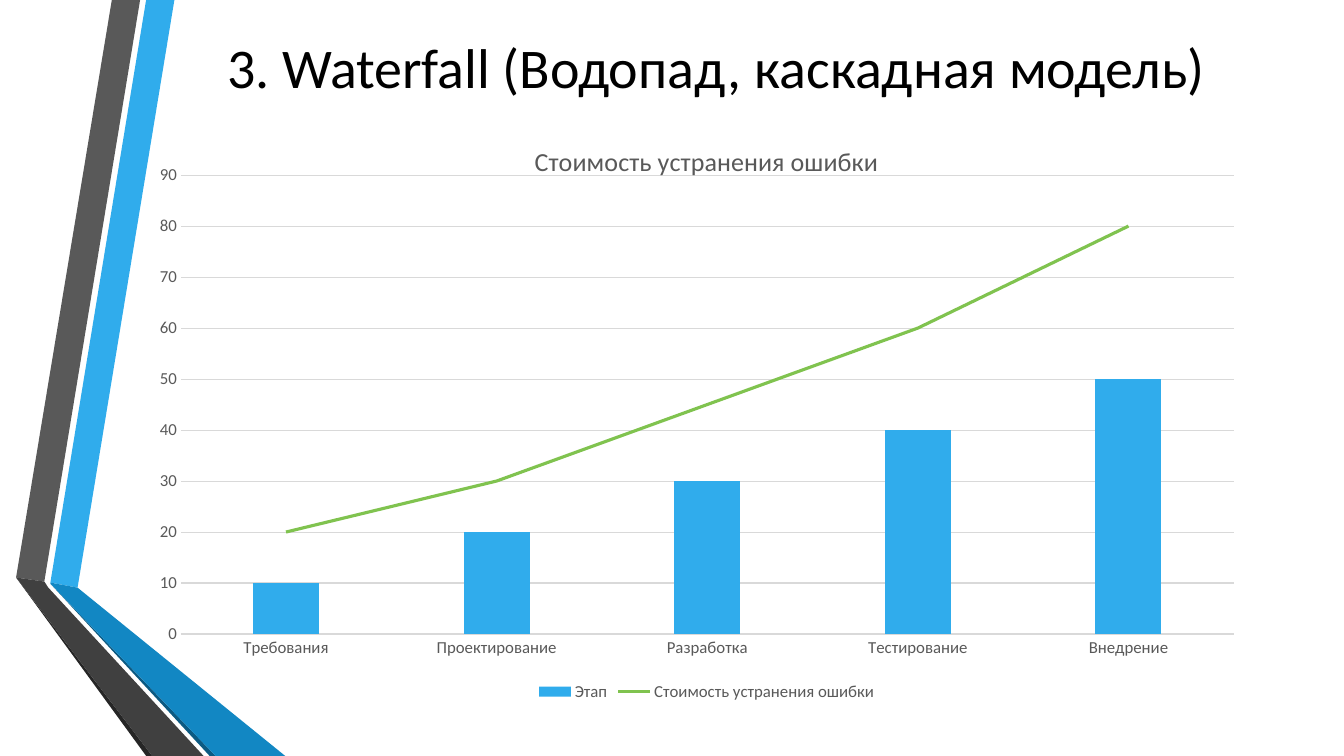
from lxml.etree import SubElement
from pptx import Presentation
from pptx.chart.data import CategoryChartData
from pptx.dml.color import RGBColor
from pptx.enum.chart import XL_CHART_TYPE as ChartType, XL_LEGEND_POSITION as LegendPos
from pptx.enum.chart import XL_MARKER_STYLE as Marker, XL_TICK_MARK as Tick
from pptx.enum.text import MSO_ANCHOR as Anchor, PP_ALIGN as Align
from pptx.oxml import parse_xml
from pptx.oxml.ns import nsdecls, qn
from pptx.util import Inches, Pt

FONT = "Calibri"
BLACK = RGBColor(0x00, 0x00, 0x00)
TEXT_GREY = RGBColor(0x59, 0x59, 0x59)
GRID_GREY = RGBColor(0xD9, 0xD9, 0xD9)
BLUE = RGBColor(0x30, 0xAC, 0xEC)
BLUE_MID = RGBColor(0x12, 0x87, 0xC3)
BLUE_DARK = RGBColor(0x0C, 0x5A, 0x82)
GREEN = RGBColor(0x80, 0xC3, 0x4F)
GREY = RGBColor(0x59, 0x59, 0x59)
GREY_MID = RGBColor(0x40, 0x40, 0x40)
GREY_DARK = RGBColor(0x26, 0x26, 0x26)

# Outlines of the folded ribbons, in inches from the corner of their box
RIBBONS = [
    (BLUE, [(0.5, 5.78), (0.77, 5.83), (1.73, 0), (1.45, 0)]),
    (GREY, [(1.39, 0), (1.11, 0), (0.16, 5.73), (0.44, 5.77)]),
    (GREY_DARK, [(0.16, 5.73), (1.45, 7.5), (1.51, 7.5)]),
    (BLUE_DARK, [(0.5, 5.79), (2.08, 7.5), (2.14, 7.5)]),
    (BLUE_MID, [(0.5, 5.79), (2.14, 7.5), (2.83, 7.5), (0.77, 5.83), (0.5, 5.78)]),
    (GREY_MID, [(2.02, 7.5), (0.48, 5.83), (0.44, 5.77), (0.16, 5.73), (1.51, 7.5)]),
]

STAGES = ["Требования", "Проектирование", "Разработка", "Тестирование", "Внедрение"]
COST_TITLE = "Стоимость устранения ошибки"
SERIES = {"Этап": (10, 20, 30, 40, 50), COST_TITLE: (20, 30, 45, 60, 80)}


def apply(target, values):
    for name, value in values.items():
        setattr(target, name, value)


def style_font(font, size, color):
    apply(font, {"name": FONT, "size": Pt(size), "bold": False})
    font.color.rgb = color


def style_line(line, width, color):
    line.width = Pt(width)
    line.color.rgb = color


def add_ribbons(slide, left, top):
    for color, outline in RIBBONS:
        points = [(round(x * 100), round(y * 100)) for x, y in outline]
        builder = slide.shapes.build_freeform(*points[0], scale=Inches(0.01))
        builder.add_line_segments(points[1:], close=True)
        ribbon = builder.convert_to_shape(left, top)
        ribbon.shadow.inherit = False
        ribbon.fill.solid()
        ribbon.fill.fore_color.rgb = color
        ribbon.line.fill.background()


def add_heading(slide, left, top, width, height):
    frame = slide.shapes.add_textbox(left, top, width, height).text_frame
    apply(frame, {"word_wrap": True, "vertical_anchor": Anchor.MIDDLE})
    paragraph = frame.paragraphs[0]
    paragraph.alignment = Align.CENTER
    run = paragraph.add_run()
    run.text = "3. Waterfall (Водопад, каскадная модель)"
    style_font(run.font, 40, BLACK)


def set_layout(parent, index, values):
    """Place a chart part by fractions of the chart's size."""
    for old in parent.findall(qn("c:layout")):
        parent.remove(old)
    layout = parse_xml(f"<c:layout {nsdecls('c')}><c:manualLayout/></c:layout>")
    for tag, value in values.items():
        SubElement(layout[0], qn(f"c:{tag}")).set("val", str(value))
    parent.insert(index, layout)


def move_cost_to_line(chart):
    """Turn the second column series into a line on the same axes."""
    columns = chart.plots[0]._element
    cost = columns.findall(qn("c:ser"))[1]
    for invert in cost.findall(qn("c:invertIfNegative")):
        cost.remove(invert)
    line_plot = parse_xml(
        f"<c:lineChart {nsdecls('c')}><c:grouping val='standard'/>"
        "<c:varyColors val='0'/><c:marker val='1'/></c:lineChart>")
    line_plot.insert(2, cost)
    for axis in columns.findall(qn("c:axId")):
        SubElement(line_plot, qn("c:axId")).set("val", axis.get("val"))
    columns.addnext(line_plot)


def add_cost_chart(slide, left, top, width, height):
    data = CategoryChartData()
    data.categories = STAGES
    for name, values in SERIES.items():
        data.add_series(name, values)
    chart = slide.shapes.add_chart(
        ChartType.COLUMN_CLUSTERED, left, top, width, height, data).chart
    style_font(chart.font, 12, TEXT_GREY)

    # Columns and line
    move_cost_to_line(chart)
    columns, line_plot = chart.plots
    apply(columns, {"gap_width": 219, "overlap": -27, "vary_by_categories": False})
    stage_fill = columns.series[0].format.fill
    stage_fill.solid()
    stage_fill.fore_color.rgb = BLUE
    cost = line_plot.series[0]
    cost.smooth = False
    cost.marker.style = Marker.NONE
    style_line(cost.format.line, 2.25, GREEN)

    # Axes
    stage_axis, cost_axis = chart.category_axis, chart.value_axis
    for axis in (stage_axis, cost_axis):
        apply(axis, {"major_tick_mark": Tick.NONE, "minor_tick_mark": Tick.NONE})
        style_font(axis.tick_labels.font, 12, TEXT_GREY)
    style_line(stage_axis.format.line, 0.75, GRID_GREY)
    apply(cost_axis, {"minimum_scale": 0, "maximum_scale": 90, "major_unit": 10,
                      "has_major_gridlines": True})
    cost_axis.format.line.fill.background()
    style_line(cost_axis.major_gridlines.format.line, 0.75, GRID_GREY)

    # Title and legend
    chart.has_title = True
    run = chart.chart_title.text_frame.paragraphs[0].add_run()
    run.text = COST_TITLE
    style_font(run.font, 18.6, TEXT_GREY)
    chart.has_legend = True
    apply(chart.legend, {"position": LegendPos.BOTTOM, "include_in_layout": False})
    style_font(chart.legend.font, 12, TEXT_GREY)

    # Placement inside the chart
    set_layout(chart.chart_title._element, 1,
               {"xMode": "edge", "yMode": "edge", "x": 0.34, "y": 0.04})
    set_layout(columns._element.getparent(), 0,
               {"layoutTarget": "inner", "xMode": "edge", "yMode": "edge",
                "x": 0.024, "y": 0.102, "w": 0.953, "h": 0.777})


def main():
    deck = Presentation()
    apply(deck, {"slide_width": Inches(13.33), "slide_height": Inches(7.5)})
    slide = deck.slides.add_slide(deck.slide_layouts[6])
    add_ribbons(slide, Inches(0), Inches(0))
    add_heading(slide, Inches(1.62), Inches(0.09), Inches(10.96), Inches(1.13))
    add_cost_chart(slide, Inches(1.53), Inches(1.14), Inches(10.96), Inches(5.86))
    deck.save("out.pptx")


if __name__ == "__main__":
    main()
